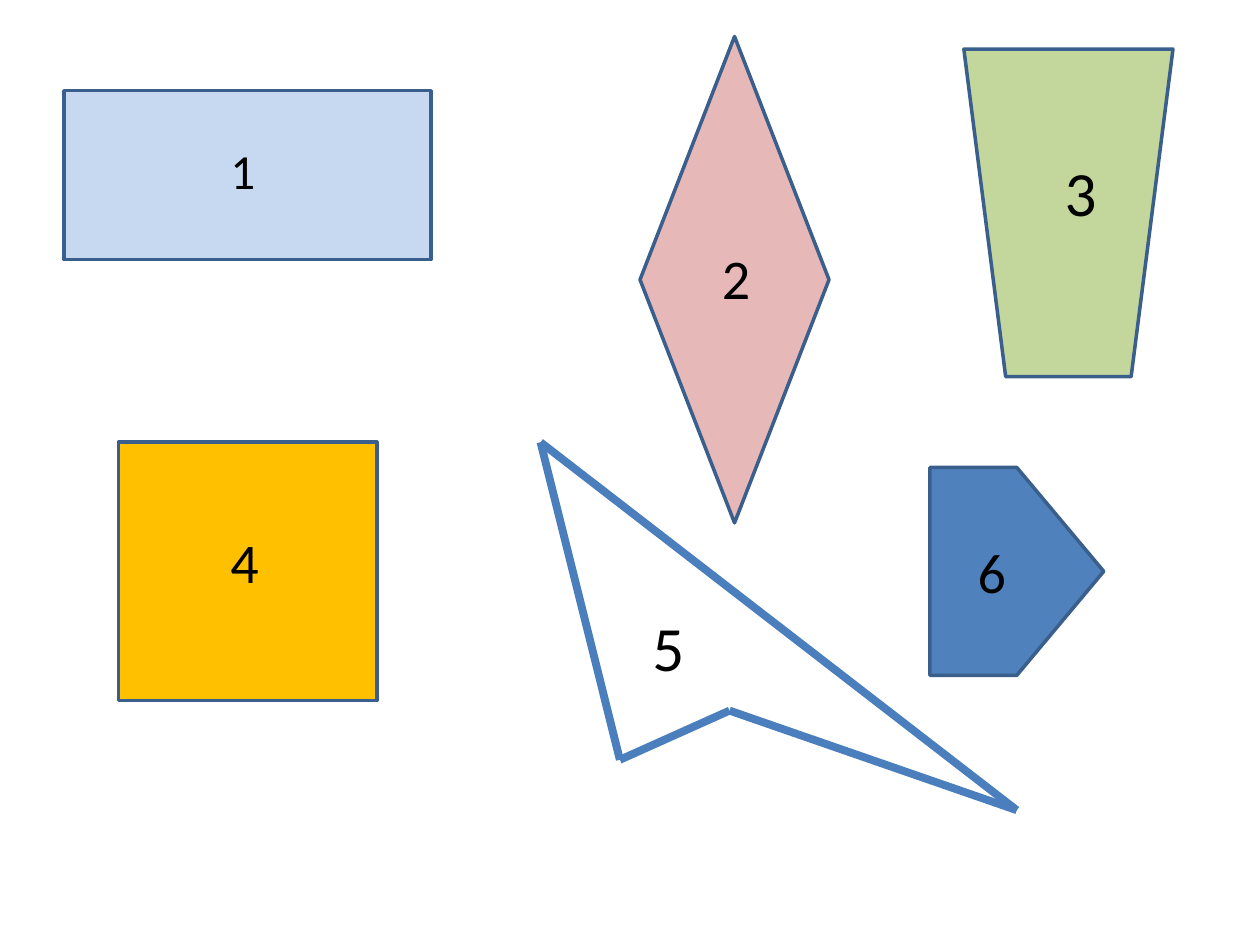
import itertools

import pptx
import pptx.dml.color
import pptx.enum.shapes
import pptx.enum.text
import pptx.util
from pptx.util import Inches

RGBColor = pptx.dml.color.RGBColor
SHAPE = pptx.enum.shapes.MSO_SHAPE

OUTLINE = RGBColor(0x3A, 0x5F, 0x8C)
EDGE = RGBColor(0x4B, 0x7E, 0xBC)
PALE_BLUE = RGBColor(0xC6, 0xD9, 0xF1)
PINK = RGBColor(0xE6, 0xB9, 0xB8)
GREEN = RGBColor(0xC3, 0xD6, 0x9B)
ORANGE = RGBColor(0xFF, 0xC0, 0x00)
BLUE = RGBColor(0x4F, 0x81, 0xBD)
BLACK = RGBColor(0, 0, 0)

# Preset, fill, and box as left, top, width, height in inches
POLYGONS = [
    (SHAPE.RECTANGLE, PALE_BLUE, (0.51, 0.72, 2.91, 1.34)),
    (SHAPE.DIAMOND, PINK, (5.08, 0.29, 1.5, 3.86)),
    (SHAPE.FLOWCHART_MANUAL_OPERATION, GREEN, (7.65, 0.39, 1.66, 2.6)),
    (SHAPE.FLOWCHART_PROCESS, ORANGE, (0.94, 3.51, 2.05, 2.05)),
    (SHAPE.PENTAGON, BLUE, (7.38, 3.71, 1.38, 1.65)),
]
DART_CORNERS = [(4.29, 3.51), (8.07, 6.43), (5.79, 5.64), (4.92, 6.03)]

# Number, font size, and box
LABELS = [
    ("1", 28, (1.73, 1.07, 0.47, 0.57)),
    ("2", 32, (5.63, 1.88, 0.39, 0.64)),
    ("3", 36, (8.35, 1.17, 0.28, 0.71)),
    ("4", 32, (1.73, 4.14, 0.47, 0.64)),
    ("5", 36, (5.08, 4.78, 0.55, 0.71)),
    ("6", 32, (7.66, 4.22, 0.31, 0.64)),
]


def add_polygon(page, preset, fill, box):
    shape = page.shapes.add_shape(preset, *map(Inches, box))
    shape.shadow.inherit = False
    shape.fill.solid()
    shape.fill.fore_color.rgb = fill
    shape.line.color.rgb = OUTLINE
    shape.line.width = pptx.util.Pt(2)


def add_dart(page, corners):
    """Join the corners with straight edges, closing back to the first."""
    for start, end in itertools.pairwise(corners + corners[:1]):
        edge = page.shapes.add_connector(
            pptx.enum.shapes.MSO_CONNECTOR.STRAIGHT, *map(Inches, start + end))
        edge.line.color.rgb = EDGE
        edge.line.width = pptx.util.Pt(4.5)
        properties = edge.element.spPr
        properties.append(properties.makeelement(pptx.oxml.ns.qn("a:effectLst"), {}))


def add_text(page, text, box, size, font="Calibri", color=BLACK):
    frame = page.shapes.add_textbox(*map(Inches, box)).text_frame
    frame.word_wrap = True
    frame.auto_size = pptx.enum.text.MSO_AUTO_SIZE.SHAPE_TO_FIT_TEXT
    span = frame.paragraphs[0].add_run()
    span.text = text
    span.font.name = font
    span.font.size = pptx.util.Pt(size)
    span.font.color.rgb = color


def main():
    deck = pptx.Presentation()
    deck.slide_width, deck.slide_height = Inches(10), Inches(7.5)
    page = deck.slides.add_slide(deck.slide_layouts[6])
    for preset, fill, box in POLYGONS:
        add_polygon(page, preset, fill, box)
    add_dart(page, DART_CORNERS)
    for number, size, box in LABELS:
        add_text(page, number, box, size=size)
    deck.save("out.pptx")


if __name__ == "__main__":
    main()
